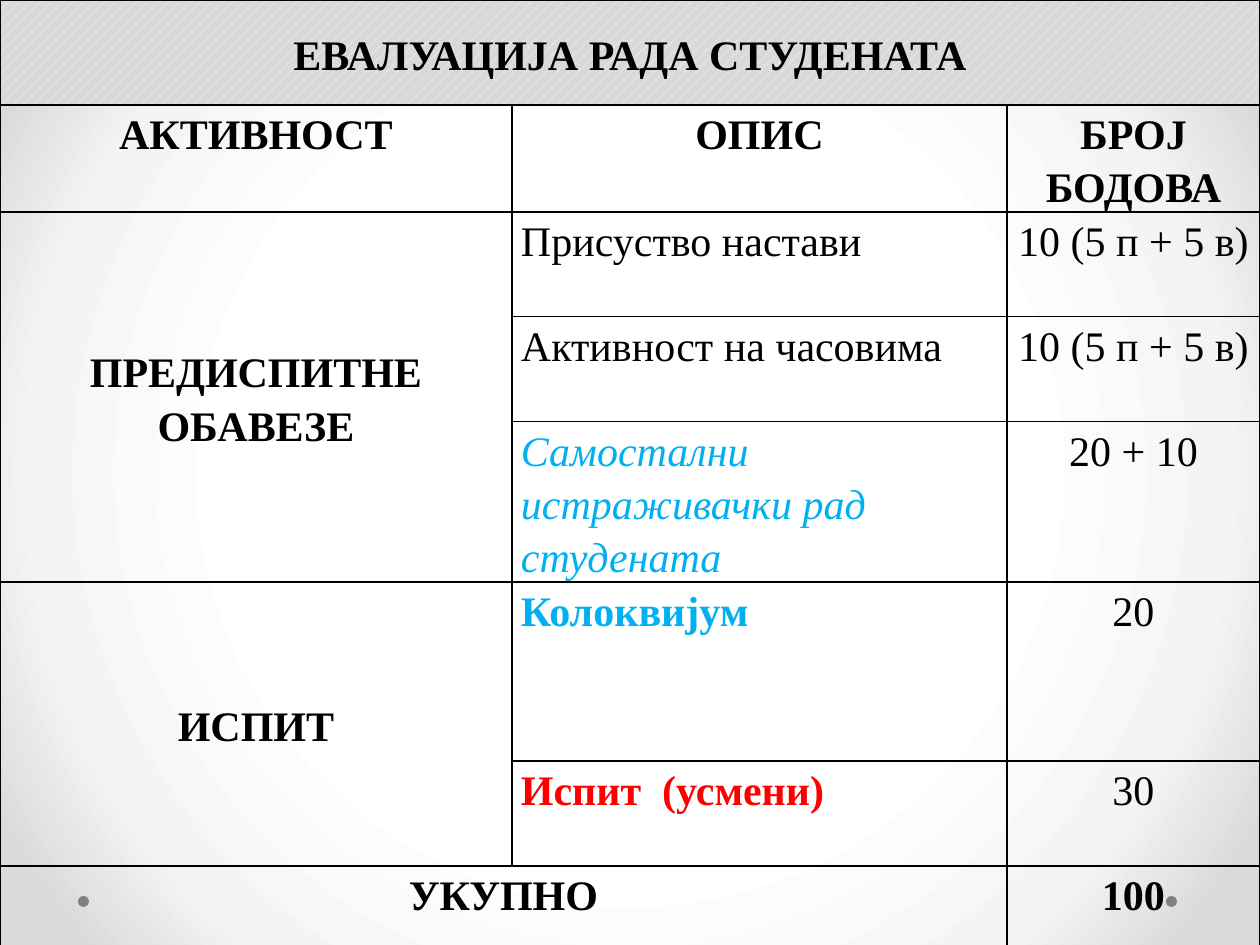
import pptx
import pptx.util
import pptx.dml.color
import pptx.enum.dml
import pptx.enum.shapes
import pptx.enum.text
import pptx.oxml
import pptx.oxml.ns

PX = 914400 // 126
SLIDE_SIZE = (1260, 945)
FONT, FONT_SIZE = "Times New Roman", 24
BLACK, BLUE, RED, GREY = "000000", "00B0F0", "FF0000", "808080"
BACKGROUND_STOPS = [(50, "FFFFFF"), (76, "F4F4F4"), (92, "DADADA")]

DOT_SIZE, DOT_TOP, DOT_LEFTS = 11, 896, (1166, 78)
COLUMN_WIDTHS = [512, 495, 253]
ROW_HEIGHTS = [105, 105, 105, 105, 136, 179, 105, 105]
CELL_INSET = 9

# Styles: (colour, bold, italic, centred, vertically in the middle)
HEADING = (BLACK, True, False, True, False)
GROUP = (BLACK, True, False, True, True)
PLAIN = (BLACK, False, False, False, False)
POINTS = (BLACK, False, False, True, False)
RESEARCH = (BLUE, False, True, False, False)
MIDTERM = (BLUE, True, False, False, False)
ORAL = (RED, True, False, False, False)

ROWS = [
    [("ЕВАЛУАЦИЈА РАДА СТУДЕНАТА", GROUP), None, None],
    [("АКТИВНОСТ", HEADING), ("ОПИС", HEADING), ("БРОЈ БОДОВА", HEADING)],
    [("ПРЕДИСПИТНЕ ОБАВЕЗЕ", GROUP), ("Присуство настави", PLAIN), ("10 (5 п + 5 в)", POINTS)],
    [None, ("Активност на часовима", PLAIN), ("10 (5 п + 5 в)", POINTS)],
    [None, ("Самостални истраживачки рад студената", RESEARCH), ("20 + 10", POINTS)],
    [("ИСПИТ", GROUP), ("Колоквијум", MIDTERM), ("20", POINTS)],
    [None, ("Испит  (усмени)", ORAL), ("30", POINTS)],
    [("УКУПНО", HEADING), None, ("100", HEADING)],
]
MERGES = [((0, 0), (0, 2)), ((2, 0), (4, 0)), ((5, 0), (6, 0)), ((7, 0), (7, 1))]


def px(length):
    return pptx.util.Emu(length * PX)


def color(value):
    return pptx.dml.color.RGBColor.from_string(value)


def set_background(slide):
    """Give the slide a circular gradient, which needs XML."""
    stops = "".join(
        f'<a:gs pos="{position * 1000}"><a:srgbClr val="{value}"/></a:gs>'
        for position, value in BACKGROUND_STOPS
    )
    gradient = pptx.oxml.parse_xml(
        f'<a:gradFill {pptx.oxml.ns.nsdecls("a")} rotWithShape="1"><a:gsLst>{stops}</a:gsLst>'
        '<a:path path="circle"><a:fillToRect l="50000" t="50000" r="50000" b="50000"/>'
        "</a:path></a:gradFill>"
    )
    fill = slide.background.fill
    fill.solid()
    fill.fore_color.rgb = color("FFFFFF")
    solid = slide.element.find(".//" + pptx.oxml.ns.qn("p:bgPr"))[0]
    solid.getparent().replace(solid, gradient)


def add_dot(slide, left):
    dot = slide.shapes.add_shape(
        pptx.enum.shapes.MSO_SHAPE.OVAL, px(left), px(DOT_TOP), px(DOT_SIZE), px(DOT_SIZE)
    )
    dot.shadow.inherit = False
    dot.fill.solid()
    dot.fill.fore_color.rgb = color(GREY)
    dot.line.fill.background()


def set_borders(cell):
    properties = cell._tc.get_or_add_tcPr()
    for index, side in enumerate(("lnL", "lnR", "lnT", "lnB")):
        border = pptx.oxml.parse_xml(
            f'<a:{side} {pptx.oxml.ns.nsdecls("a")} w="12700"><a:solidFill>'
            f'<a:srgbClr val="{BLACK}"/></a:solidFill></a:{side}>'
        )
        properties.insert(index, border)


def write_cell(cell, text, style):
    text_color, bold, italic, centred, middle = style
    anchors = pptx.enum.text.MSO_ANCHOR
    cell.vertical_anchor = anchors.MIDDLE if middle else anchors.TOP
    paragraph = cell.text_frame.paragraphs[0]
    alignments = pptx.enum.text.PP_ALIGN
    paragraph.alignment = alignments.CENTER if centred else alignments.LEFT
    paragraph.line_spacing = 1.15
    paragraph.space_after = pptx.util.Pt(10)
    run = paragraph.add_run()
    run.text = text
    run.font.name = FONT
    run.font.size = pptx.util.Pt(FONT_SIZE)
    run.font.bold = bold
    run.font.italic = italic
    run.font.color.rgb = color(text_color)


def add_evaluation_table(slide):
    table = slide.shapes.add_table(
        len(ROWS), len(COLUMN_WIDTHS), 0, 0, px(sum(COLUMN_WIDTHS)), px(sum(ROW_HEIGHTS))
    ).table
    table.first_row = table.horz_banding = False
    for column, width in zip(table.columns, COLUMN_WIDTHS):
        column.width = px(width)
    for row, height in zip(table.rows, ROW_HEIGHTS):
        row.height = px(height)
    for start, end in MERGES:
        table.cell(*start).merge(table.cell(*end))
    for row, contents in zip(table.rows, ROWS):
        for cell, content in zip(row.cells, contents):
            cell.margin_left = cell.margin_right = px(CELL_INSET)
            cell.margin_top = cell.margin_bottom = 0
            cell.fill.background()
            set_borders(cell)
            if content:
                write_cell(cell, *content)
    title_fill = table.cell(0, 0).fill
    title_fill.patterned()
    title_fill.pattern = pptx.enum.dml.MSO_PATTERN.PERCENT_20
    title_fill.fore_color.rgb = color("FFFFFF")
    title_fill.back_color.rgb = color("D9D9D9")


def main():
    presentation = pptx.Presentation()
    presentation.slide_width, presentation.slide_height = map(px, SLIDE_SIZE)
    slide = presentation.slides.add_slide(presentation.slide_layouts[6])
    set_background(slide)
    for left in DOT_LEFTS:
        add_dot(slide, left)
    add_evaluation_table(slide)
    presentation.save("out.pptx")


if __name__ == "__main__":
    main()
